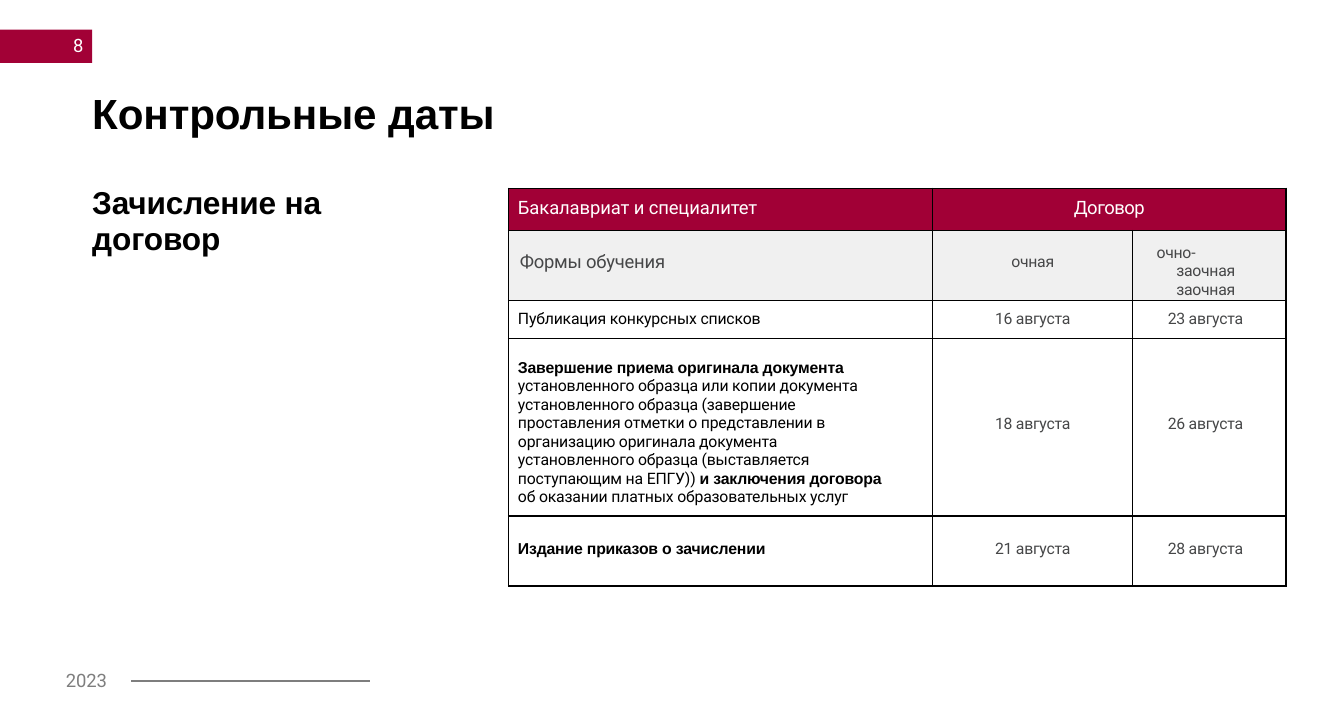
from dataclasses import dataclass

from lxml import etree
from pptx import Presentation
from pptx.dml.color import RGBColor
from pptx.enum.shapes import MSO_CONNECTOR, MSO_SHAPE
from pptx.enum.text import MSO_ANCHOR, PP_ALIGN
from pptx.oxml.ns import qn
from pptx.util import Pt

RECTANGLE = MSO_SHAPE.RECTANGLE
STRAIGHT = MSO_CONNECTOR.STRAIGHT
LEFT, CENTER = PP_ALIGN.LEFT, PP_ALIGN.CENTER
TOP = MSO_ANCHOR.TOP


@dataclass(frozen=True)
class Theme:
    crimson: str = "A20136"
    header: str = "A10036"
    subheader: str = "F0F0F0"
    white: str = "FFFFFF"
    black: str = "000000"
    dark_grey: str = "464748"
    footer_grey: str = "7E7E7E"
    heading_font: str = "Arial"
    body_font: str = "Roboto"
    title_size: float = 32
    subtitle_size: float = 24
    label_size: float = 14
    body_size: float = 12


@dataclass
class Entry:
    """Table cell content: each paragraph is a list of (text, bold) runs."""
    paragraphs: list
    top: float
    size: float
    color: str
    fill: str
    left: float = 0
    right: float = 0
    hanging: float = 0
    align: PP_ALIGN = LEFT
    tracking: float = -0.2


def color_of(value):
    return RGBColor.from_string(value)


class SlideBuilder:
    def __init__(self, slide, theme):
        self.slide = slide
        self.theme = theme

    def set_text(self, frame, paragraphs, size, color, align=LEFT,
                 tracking=-0.1, line=None, hanging=0):
        """Fill a frame; bold text takes the heading font, the rest the body font."""
        for index, runs in enumerate(paragraphs):
            paragraph = frame.paragraphs[0] if index == 0 else frame.add_paragraph()
            paragraph.alignment = align
            if line:
                paragraph.line_spacing = Pt(line)
            properties = paragraph._p.get_or_add_pPr()
            if hanging:
                properties.set("marL", str(Pt(hanging)))
                properties.set("indent", str(-Pt(hanging)))
            paragraph.font.size = Pt(size)
            paragraph.font.color.rgb = color_of(color)
            properties.find(qn("a:defRPr")).set("spc", str(round(tracking * 100)))
            added = [paragraph.add_run() for _ in runs]
            for run, (text, _) in zip(added, runs):
                run.text = text
            uniform = len({bold for _, bold in runs}) == 1
            fonts = [paragraph.font] if uniform else [run.font for run in added]
            for font, (_, bold) in zip(fonts, runs):
                font.bold = bold
                font.name = self.theme.heading_font if bold else self.theme.body_font

    def text(self, left, top, width, height, lines, size, color, bold=False,
             line=None, inset=0):
        frame = self.slide.shapes.add_textbox(
            Pt(left), Pt(top), Pt(width), Pt(height)).text_frame
        frame.word_wrap = True
        frame.margin_left = frame.margin_right = frame.margin_bottom = 0
        frame.margin_top = Pt(inset)
        self.set_text(frame, [[(text, bold)] for text in lines], size, color, line=line)

    def block(self, left, top, width, height, color):
        block = self.slide.shapes.add_shape(
            RECTANGLE, Pt(left), Pt(top), Pt(width), Pt(height))
        block.shadow.inherit = False
        block.fill.solid()
        block.fill.fore_color.rgb = color_of(color)
        block.line.fill.background()

    def rule(self, left, top, width, color, weight):
        rule = self.slide.shapes.add_connector(
            STRAIGHT, Pt(left), Pt(top), Pt(left + width), Pt(top))
        rule.line.color.rgb = color_of(color)
        rule.line.width = Pt(weight)
        etree.SubElement(rule._element.spPr, qn("a:effectLst"))

    def border(self, cell):
        properties = cell._tc.get_or_add_tcPr()
        for side in ("lnL", "lnR", "lnT", "lnB"):
            edge = etree.SubElement(properties, qn(f"a:{side}"), w=str(Pt(1)))
            fill = etree.SubElement(edge, qn("a:solidFill"))
            etree.SubElement(fill, qn("a:srgbClr"), val=self.theme.black)

    def cell(self, cell, entry):
        self.border(cell)
        cell.margin_left, cell.margin_right = Pt(entry.left), Pt(entry.right)
        cell.margin_top, cell.margin_bottom = Pt(entry.top), 0
        cell.vertical_anchor = TOP
        cell.fill.solid()
        cell.fill.fore_color.rgb = color_of(entry.fill)
        self.set_text(cell.text_frame, entry.paragraphs, entry.size, entry.color,
                      entry.align, entry.tracking, hanging=entry.hanging)

    def table(self, left, top, widths, heights, rows):
        """Draw rows of entries; a row's None continues the cell before it."""
        table = self.slide.shapes.add_table(
            len(heights), len(widths), Pt(left), Pt(top),
            Pt(sum(widths)), Pt(sum(heights))).table
        for column, width in zip(table.columns, widths):
            column.width = Pt(width)
        for row, height in zip(table.rows, heights):
            row.height = Pt(height)
        for r, entries in enumerate(rows):
            for c, entry in enumerate(entries):
                if entry is None:
                    self.border(table.cell(r, c))
                    table.cell(r, c - 1).merge(table.cell(r, c))
                else:
                    self.cell(table.cell(r, c), entry)


def schedule_rows(theme):
    def header(text, **options):
        return Entry([[(text, False)]], 6.5, theme.label_size, theme.white,
                     theme.header, **options)

    def study_form(text, top, size=theme.body_size, **options):
        return Entry([[(text, False)]], top, size, theme.dark_grey,
                     theme.subheader, **options)

    def stage(paragraphs, top, first_date, second_date, date_top):
        def date(text, **options):
            return Entry([[(text, False)]], date_top, theme.body_size,
                         theme.dark_grey, theme.white, **options)
        return [Entry(paragraphs, top, theme.body_size, theme.black, theme.white,
                      left=7.2, right=34, tracking=-0.15),
                date(first_date, align=CENTER), date(second_date, left=26.6)]

    originals = [
        [("Завершение приема оригинала документа ", True),
         ("установленного образца или копии документа установленного образца "
          "(завершение проставления отметки о представлении в организацию "
          "оригинала документа установленного образца (выставляется", False)],
        [("поступающим на ЕПГУ)) ", False), ("и заключения договора", True)],
        [("об оказании платных образовательных услуг", False)],
    ]
    return [
        [header("Бакалавриат и специалитет", left=7.2, tracking=-0.1),
         header("Договор", align=CENTER, tracking=-0.4), None],
        [study_form("Формы обучения", 16, theme.label_size, left=8.6),
         study_form("очная", 17.2, align=CENTER),
         study_form("очно-заочная заочная", 10.2, left=18, right=30, hanging=15)],
        stage([[("Публикация конкурсных списков", False)]], 6.5,
              "16 августа", "23 августа", 6.5),
        stage(originals, 15.5, "18 августа", "26 августа", 58),
        stage([[("Издание приказов о зачислении", True)]], 18.3,
              "21 августа", "28 августа", 18.3),
    ]


def main():
    theme = Theme()
    deck = Presentation()
    deck.slide_width, deck.slide_height = Pt(1020.24), Pt(539.28)
    page = SlideBuilder(deck.slides.add_slide(deck.slide_layouts[6]), theme)

    page.block(0, 22.6, 70, 25.2, theme.crimson)
    page.rule(99.5, 517.6, 181.5, theme.footer_grey, 1.56)
    page.text(70, 65.5, 320, 40, ["Контрольные даты"], theme.title_size,
              theme.black, bold=True, inset=1)
    page.text(50, 508.3, 36, 18, ["2023"], theme.label_size,
              theme.footer_grey, line=16.5)
    page.text(55.5, 25.2, 12, 18.7, ["8"], theme.label_size, theme.white, inset=1)
    page.text(70, 139, 180, 57, ["Зачисление на", "договор"], theme.subtitle_size,
              theme.black, bold=True, line=27.4, inset=1)
    page.table(386, 143, [322, 152, 116.3], [32, 53.6, 28.9, 134.5, 53.2],
               schedule_rows(theme))
    deck.save("out.pptx")


if __name__ == "__main__":
    main()
